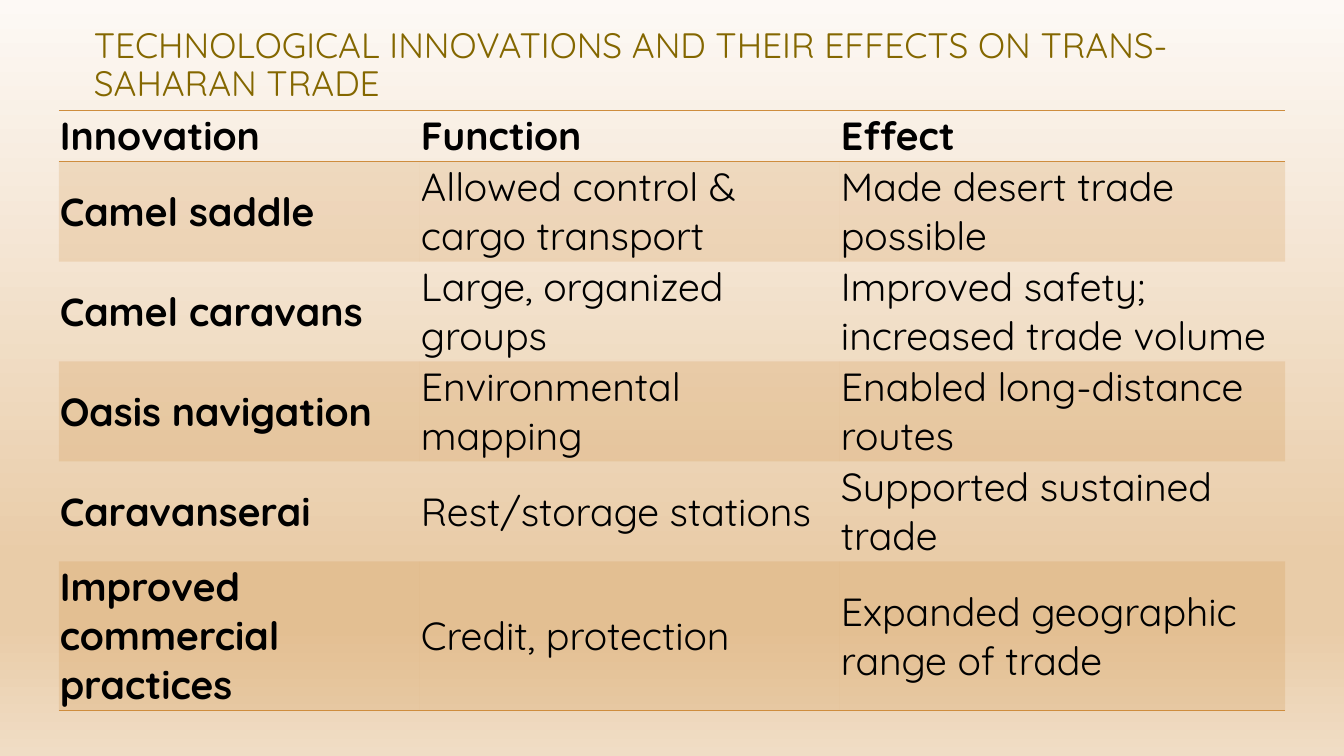
from pptx import Presentation
from pptx.dml.color import RGBColor
from pptx.enum.shapes import MSO_SHAPE as Shape
from pptx.enum.text import MSO_ANCHOR as Anchor, PP_ALIGN as Align
from pptx.oxml import parse_xml
from pptx.oxml.ns import nsdecls, qn
from pptx.util import Inches, Pt

COLORS = {"title": "846700", "text": "000000", "accent": "CE8D3E",
          "top": "FDF9F5", "sand": "E9CCA8", "bottom": "F0DDC5"}
BACKDROP = [(0, "top"), (74, "sand"), (83, "sand"), (100, "bottom")]
COLUMNS = [43, 50, 53]
ROWS = [
    (1, ["Innovation", "Function", "Effect"]),
    (2, ["Camel saddle", "Allowed control & cargo transport", "Made desert trade possible"]),
    (2, ["Camel caravans", "Large, organized groups",
         "Improved safety; increased trade volume"]),
    (2, ["Oasis navigation", "Environmental mapping", "Enabled long-distance routes"]),
    (2, ["Caravanserai", "Rest/storage stations", "Supported sustained trade"]),
    (3, ["Improved commercial practices", "Credit, protection",
         "Expanded geographic range of trade"]),
]


class SlideBuilder:
    """Draws styled elements on a page with a grid of 160 by 90 units."""

    font_name = "Quicksand"
    no_style = "{2D5ABB26-0587-4C30-8999-92F81FD0307C}"

    def __init__(self, deck):
        self.page = deck.slides.add_slide(deck.slide_layouts[6])
        self.unit = deck.slide_width / 160

    def grid(self, *units):
        return [round(value * self.unit) for value in units]

    def style(self, para, size, color, bold=False):
        para.alignment = Align.LEFT
        para.font.name = self.font_name
        para.font.size = Pt(size)
        para.font.bold = bold
        para.font.color.rgb = RGBColor.from_string(COLORS[color])

    def backdrop(self, stops):
        panel = self.page.shapes.add_shape(Shape.RECTANGLE, *self.grid(0, 0, 160, 90))
        panel.shadow.inherit = False
        panel.line.fill.background()
        panel.fill.gradient()
        panel.fill.gradient_angle = 270
        stop_list = panel._element.spPr.find(qn("a:gradFill")).find(qn("a:gsLst"))
        stop_list.clear()
        for percent, color in stops:
            stop_list.append(parse_xml(
                f'<a:gs {nsdecls("a")} pos="{percent * 1000}">'
                f'<a:srgbClr val="{COLORS[color]}"/></a:gs>'))

    def title(self, text, left, top, width, height):
        box = self.page.shapes.add_textbox(*self.grid(left, top, width, height))
        frame = box.text_frame
        frame.word_wrap = True
        frame.vertical_anchor = Anchor.BOTTOM
        para = frame.paragraphs[0]
        para.text = text
        para.line_spacing = 0.9
        self.style(para, 25.2, "title")

    def border(self, cell, sides):
        for index, side in enumerate(sides):
            cell._tc.get_or_add_tcPr().insert(index, parse_xml(
                f'<a:ln{side} {nsdecls("a")} w="{Pt(1)}"><a:solidFill>'
                f'<a:srgbClr val="{COLORS["accent"]}"/></a:solidFill></a:ln{side}>'))

    def tint(self, cell, percent):
        cell.fill.solid()
        cell.fill.fore_color.rgb = RGBColor.from_string(COLORS["accent"])
        color = next(cell._tc.tcPr.iter(qn("a:srgbClr")))
        color.append(parse_xml(f'<a:alpha {nsdecls("a")} val="{percent * 1000}"/>'))

    def cell(self, cell, text, bold, shaded, sides):
        cell.margin_left = cell.margin_right = Inches(0.01)
        cell.margin_top = cell.margin_bottom = Inches(0.01)
        cell.vertical_anchor = Anchor.MIDDLE
        cell.text = text
        self.style(cell.text_frame.paragraphs[0], 28, "text", bold)
        if shaded:
            self.tint(cell, 20)
        else:
            cell.fill.background()
        self.border(cell, sides)

    def table(self, rows, columns, left, top):
        heights = [0.2 + 5.85 * lines for lines, _ in rows]
        frame = self.page.shapes.add_table(
            len(rows), len(columns), *self.grid(left, top, sum(columns), sum(heights)))
        table = frame.table
        table.first_row = table.horz_banding = False
        table._tbl.tblPr.find(qn("a:tableStyleId")).text = self.no_style
        for column, width in zip(table.columns, self.grid(*columns)):
            column.width = width
        for row, height in zip(table.rows, self.grid(*heights)):
            row.height = height
        sides = {0: "TB", len(rows) - 1: "B"}
        for r, (_, texts) in enumerate(rows):
            for c, text in enumerate(texts):
                self.cell(table.cell(r, c), text, r == 0 or c == 0, r % 2 == 1,
                          sides.get(r, ""))


def main():
    deck = Presentation()
    deck.slide_width, deck.slide_height = Inches(13.33), Inches(7.5)
    builder = SlideBuilder(deck)
    builder.backdrop(BACKDROP)
    builder.title("TECHNOLOGICAL INNOVATIONS AND THEIR EFFECTS ON TRANS-SAHARAN TRADE",
                  10, 5, 140, 8)
    builder.table(ROWS, COLUMNS, 7, 13.2)
    deck.save("out.pptx")


if __name__ == "__main__":
    main()
